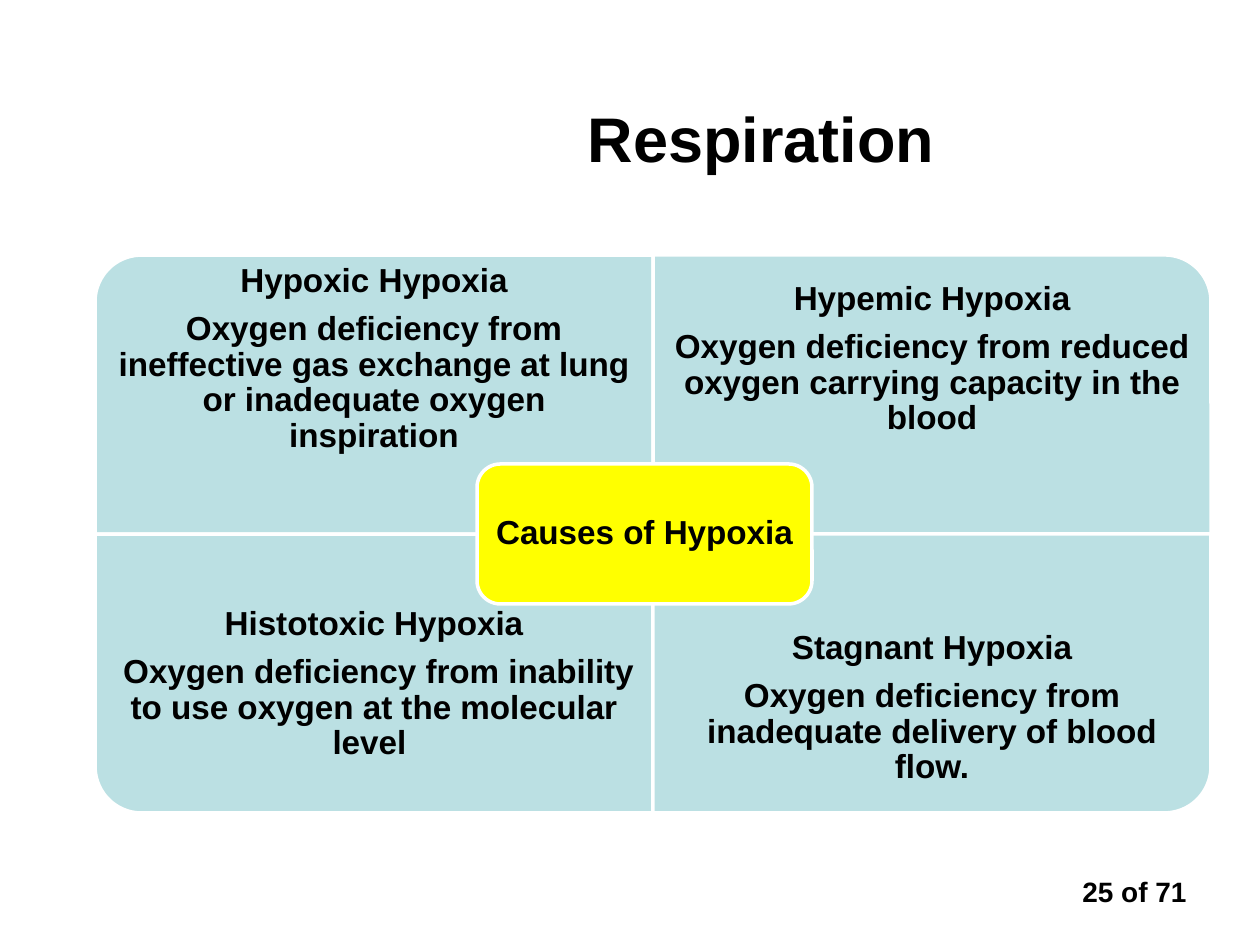
import pptx
import pptx.util
import pptx.dml.color
import pptx.enum.shapes
import pptx.enum.text

PX = 914400 / 126
TITLE = "Respiration"
CENTER = "Causes of Hypoxia "
PAGE = "25 of 71"
QUADRANTS = [
    (0, 0, 270, 19, ["Hypoxic Hypoxia",
                     "Oxygen deficiency from ineffective gas exchange at lung or inadequate oxygen inspiration"]),
    (1, 0, 0, 19, ["Hypemic Hypoxia",
                   "Oxygen deficiency from reduced oxygen carrying capacity in the blood"]),
    (0, 1, 180, 67, ["Histotoxic Hypoxia",
                     " Oxygen deficiency from inability to use oxygen at the molecular level "]),
    (1, 1, 90, 19, ["Stagnant Hypoxia",
                    "Oxygen deficiency from inadequate delivery of blood flow."]),
]
LEFT, TOP, CELL_W, CELL_H = 95, 255, 558, 279
TEXT_H = 209
SHAPE = pptx.enum.shapes.MSO_SHAPE


def px(n):
    return pptx.util.Emu(round(n * PX))


def box(*lengths):
    return [px(n) for n in lengths]


def rgb(color):
    return pptx.dml.color.RGBColor.from_string(color)


def write(s, lines, size, insets=(13, 6, 13, 6), spacing=0.9, after=0):
    tf = s.text_frame
    tf.text = "\n".join(lines)
    tf.word_wrap = True
    tf.auto_size = pptx.enum.text.MSO_AUTO_SIZE.NONE
    tf.vertical_anchor = pptx.enum.text.MSO_ANCHOR.MIDDLE
    tf.margin_left, tf.margin_top, tf.margin_right, tf.margin_bottom = box(*insets)
    for p in tf.paragraphs:
        p.alignment = pptx.enum.text.PP_ALIGN.CENTER
        p.line_spacing = spacing
        p.space_before = pptx.util.Pt(0)
        p.space_after = pptx.util.Pt(after)
        for r in p.runs:
            r.font.name = "Arial"
            r.font.size = pptx.util.Pt(size)
            r.font.bold = True
            r.font.color.rgb = rgb("000000")


def add_panel(slide, kind, x, y, w, h, color):
    s = slide.shapes.add_shape(kind, *box(x, y, w, h))
    s.shadow.inherit = False
    s.fill.solid()
    s.fill.fore_color.rgb = rgb(color)
    s.line.color.rgb = rgb("FFFFFF")
    s.line.width = pptx.util.Pt(2)
    return s


def main():
    prs = pptx.Presentation()
    prs.slide_width, prs.slide_height = box(1260, 945)
    slide = prs.slides.add_slide(prs.slide_layouts[5])

    title = slide.shapes.title
    title.left, title.top, title.width, title.height = box(325, 53, 872, 168)
    write(title, [TITLE], 36, spacing=1.0)

    for col, row, turn, bottom, lines in QUADRANTS:
        x, y = LEFT + col * CELL_W, TOP + row * CELL_H
        w, h = (CELL_H, CELL_W) if turn % 180 else (CELL_W, CELL_H)
        s = add_panel(slide, SHAPE.ROUND_1_RECTANGLE,
                      x + (CELL_W - w) / 2, y + (CELL_H - h) / 2, w, h, "BBE0E3")
        s.rotation = turn
        text_y = y + row * (CELL_H - TEXT_H)
        label = slide.shapes.add_textbox(*box(x, text_y, CELL_W, TEXT_H))
        write(label, lines, 19, (19, 19, 19, bottom), after=6.65)

    center = add_panel(slide, SHAPE.ROUNDED_RECTANGLE, 477, 464, 335, 140, "FFFF00")
    write(center, [CENTER], 19, (10, 10, 10, 10))

    page = slide.shapes.add_textbox(*box(1061, 872, 147, 43))
    write(page, [PAGE], 16)

    prs.save("out.pptx")


if __name__ == "__main__":
    main()
